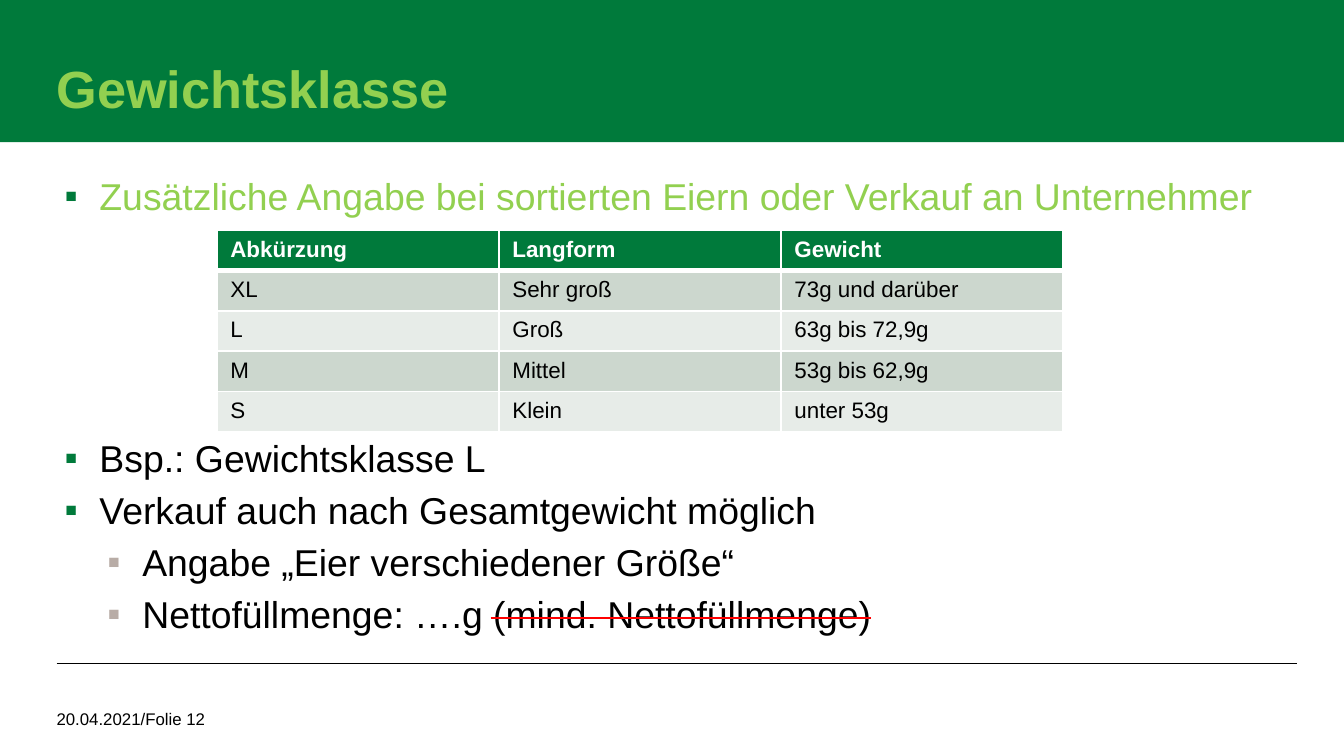
from pptx import Presentation
from pptx.dml.color import RGBColor
from pptx.enum.shapes import MSO_CONNECTOR, MSO_SHAPE
from pptx.enum.text import MSO_ANCHOR, PP_ALIGN
from pptx.oxml.ns import qn
from pptx.util import Cm, Pt
from lxml import etree

RECT = MSO_SHAPE.RECTANGLE
STRAIGHT = MSO_CONNECTOR.STRAIGHT
TOP, MIDDLE, BOTTOM = MSO_ANCHOR.TOP, MSO_ANCHOR.MIDDLE, MSO_ANCHOR.BOTTOM
LEFT = PP_ALIGN.LEFT

GREEN = RGBColor(0x00, 0x7A, 0x3B)
LIME = RGBColor(0x92, 0xD0, 0x50)
TAUPE = RGBColor(0xB8, 0xAC, 0xA6)
SAGE = RGBColor(0xCC, 0xD7, 0xCE)
PALE = RGBColor(0xE7, 0xEC, 0xE8)
BLACK = RGBColor(0x00, 0x00, 0x00)
WHITE = RGBColor(0xFF, 0xFF, 0xFF)
RED = RGBColor(0xFF, 0x00, 0x00)

EDGE = 1.07  # left margin in cm
STEP = 28 * 2.54 / 72  # 22 pt line and 6 pt gap, in cm


class Deck:
    font = "Arial"
    marks = {1: GREEN, 2: TAUPE}

    def __init__(self, wide, high):
        self.prs = Presentation()
        self.prs.slide_width, self.prs.slide_height = Cm(wide), Cm(high)
        self.slide = self.prs.slides.add_slide(self.prs.slide_layouts[6])

    def label(self, para, text, size, color, bold=False, **form):
        for name, value in {"alignment": LEFT, **form}.items():
            setattr(para, name, value)
        run = para.add_run()
        run.text = text
        look = {"name": self.font, "size": Pt(size), "bold": bold}
        for name, value in look.items():
            setattr(run.font, name, value)
        run.font.color.rgb = color

    def frame(self, shape, anchor, pads=(0, 0, 0, 0)):
        frame = shape.text_frame
        frame.word_wrap = True
        frame.vertical_anchor = anchor
        for side, pad in zip(("left", "top", "right", "bottom"), pads):
            setattr(frame, f"margin_{side}", Cm(pad))
        return frame

    def banner(self, text, wide, high):
        shape = self.slide.shapes.add_shape(RECT, 0, 0, Cm(wide), Cm(high))
        shape.shadow.inherit = False
        shape.fill.solid()
        shape.fill.fore_color.rgb = GREEN
        shape.line.fill.background()
        frame = self.frame(shape, BOTTOM, (EDGE, 0.51, EDGE, 0.41))
        self.label(frame.paragraphs[0], text, 28, LIME, True, line_spacing=0.95)

    def box(self, x, y, wide, high, anchor):
        shape = self.slide.shapes.add_textbox(Cm(x), Cm(y), Cm(wide), Cm(high))
        return self.frame(shape, anchor)

    def note(self, text, *place):
        para = self.box(*place, MIDDLE).paragraphs[0]
        self.label(para, text, 9, BLACK, line_spacing=Pt(12))

    def bullet(self, para, level):
        props = para._p.get_or_add_pPr()
        props.set("marL", str(Cm(0.81 * level)))
        props.set("indent", str(Cm(-0.66)))
        props.set("lvl", str(level - 1))
        tint = etree.SubElement(props, qn("a:buClr"))
        etree.SubElement(tint, qn("a:srgbClr"), val=str(self.marks[level]))
        etree.SubElement(props, qn("a:buFont"), typeface=self.font)
        etree.SubElement(props, qn("a:buChar"), char="▪")

    def points(self, y, items, color):
        frame = self.box(EDGE, y, 23.29, STEP * len(items), TOP)
        for i, (level, text) in enumerate(items):
            para = frame.add_paragraph() if i else frame.paragraphs[0]
            self.bullet(para, level)
            self.label(para, text, 20, color,
                       line_spacing=Pt(22), space_after=Pt(6))

    def border(self, cell, row):
        props = cell._tc.get_or_add_tcPr()
        thick = {0: "B", 1: "T"}.get(row)  # rule below the head row
        for side in "LRTB":
            width = Pt(3 if side == thick else 1)
            line = etree.SubElement(props, qn(f"a:ln{side}"), w=str(width))
            fill = etree.SubElement(line, qn("a:solidFill"))
            etree.SubElement(fill, qn("a:srgbClr"), val=str(WHITE))

    def table(self, x, y, wide, high, rows):
        count, span = len(rows), len(rows[0])
        grid = self.slide.shapes.add_table(
            count, span, Cm(x), Cm(y), Cm(wide * span), Cm(high * count)).table
        for r, row in enumerate(rows):
            head = r == 0
            shade = GREEN if head else (PALE, SAGE)[r % 2]
            for c, text in enumerate(row):
                cell = grid.cell(r, c)
                self.border(cell, r)
                cell.fill.solid()
                cell.fill.fore_color.rgb = shade
                self.label(cell.text_frame.paragraphs[0], text, 12,
                           WHITE if head else BLACK, head)

    def rule(self, start, end, y, color, width):
        line = self.slide.shapes.add_connector(
            STRAIGHT, Cm(start), Cm(y), Cm(end), Cm(y))
        line.line.color.rgb = color
        line.line.width = Pt(width)
        etree.SubElement(line._element.spPr, qn("a:effectLst"))


def main():
    deck = Deck(25.4, 14.29)

    # Title and footer rule
    deck.rule(EDGE, 24.51, 12.55, BLACK, 0.5)
    deck.banner("Gewichtsklasse", 25.4, 2.69)

    # Points above and below the table
    top = 3.35
    deck.points(top, [
        (1, "Zusätzliche Angabe bei sortierten Eiern oder Verkauf an Unternehmer"),
    ], LIME)
    deck.points(top + 5 * STEP, [
        (1, "Bsp.: Gewichtsklasse L"),
        (1, "Verkauf auch nach Gesamtgewicht möglich"),
        (2, "Angabe „Eier verschiedener Größe“"),
        (2, "Nettofüllmenge: ….g (mind. Nettofüllmenge)"),
    ], BLACK)

    # Footer
    deck.note("20.04.2021/Folie 12", EDGE, 13.08, 13.61, 0.97)

    # Weight classes
    deck.table(4.1, 4.35, 5.33, 0.72, [
        ("Abkürzung", "Langform", "Gewicht"),
        ("XL", "Sehr groß", "73g und darüber"),
        ("L", "Groß", "63g bis 72,9g"),
        ("M", "Mittel", "53g bis 62,9g"),
        ("S", "Klein", "unter 53g"),
    ])

    # Strike through the wrong wording
    deck.rule(9.27, 16.46, 11.68, RED, 1.5)

    deck.prs.save("out.pptx")


if __name__ == "__main__":
    main()
